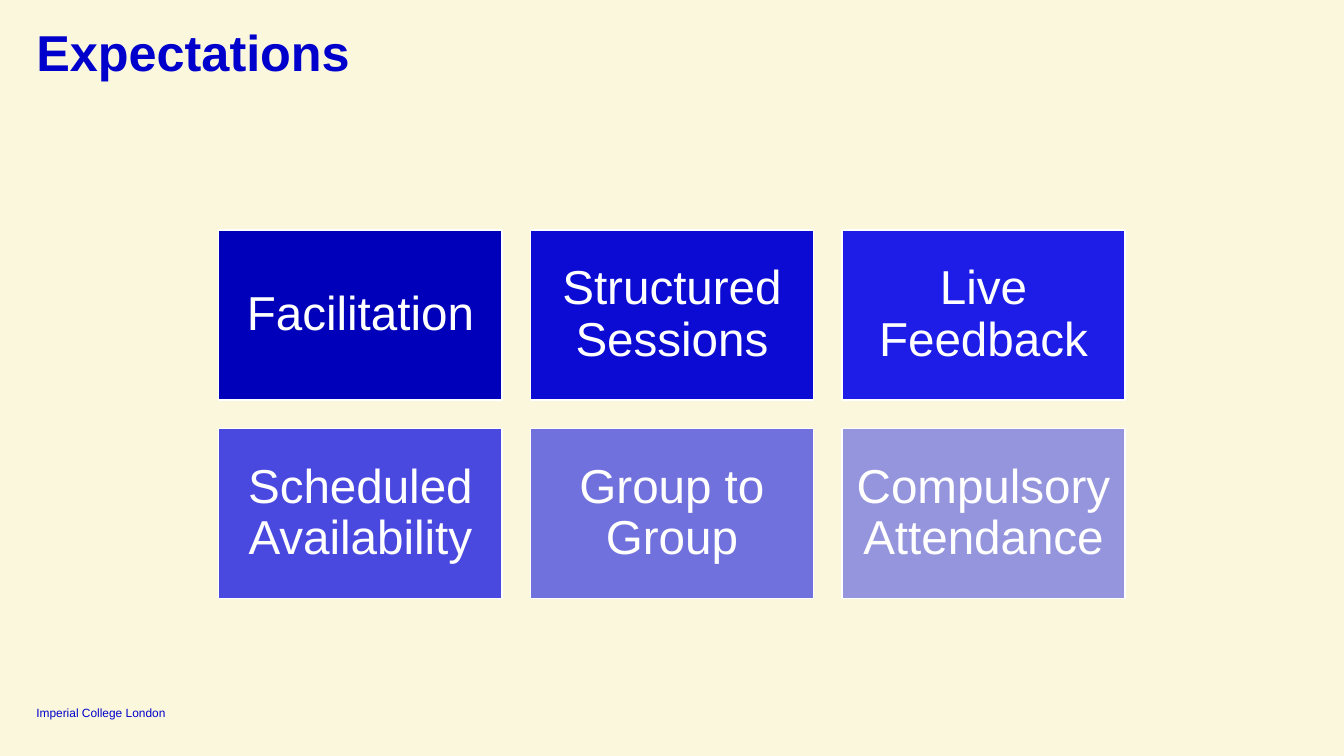
from pptx import Presentation
from pptx.dml.color import RGBColor
from pptx.enum.shapes import MSO_SHAPE
from pptx.enum.text import MSO_ANCHOR, PP_ALIGN
from pptx.util import Inches, Pt

COLOURS = {"background": "FBF7DC", "heading": "0000CD", "white": "FFFFFF"}
EXPECTATIONS = [
    ("Facilitation", "0000BA"),
    ("Structured Sessions", "0B0BD4"),
    ("Live Feedback", "1D1DE7"),
    ("Scheduled Availability", "4949E0"),
    ("Group to Group", "7171DD"),
    ("Compulsory Attendance", "9595DE"),
]

# Card grid, in inches
COLUMNS = 3
GRID_LEFT, GRID_TOP = 2.17, 2.28
CARD_WIDTH, CARD_HEIGHT = 2.81, 1.69
GAP = 0.28


def colour(value):
    return RGBColor.from_string(value)


def set_text(shape, text, size, text_colour, anchor, inset=0, bold=False,
             align=PP_ALIGN.LEFT, line_spacing=1.0):
    frame = shape.text_frame
    frame.word_wrap = True
    frame.vertical_anchor = anchor
    frame.margin_left = frame.margin_right = Inches(inset)
    frame.margin_top = frame.margin_bottom = Inches(inset)
    frame.text = text
    para = frame.paragraphs[0]
    para.alignment = align
    para.line_spacing = line_spacing
    para.space_before = Pt(0)
    para.font.name = "Arial"
    para.font.size = Pt(size)
    para.font.bold = bold
    para.font.color.rgb = colour(text_colour)


def format_title(page, text):
    title = page.shapes.title
    title.left, title.top = Inches(0.36), Inches(0.28)
    title.width, title.height = Inches(9.3), Inches(0.58)
    set_text(title, text, 36, COLOURS["heading"], MSO_ANCHOR.TOP,
             bold=True, line_spacing=0.9)


def add_footer(page, text):
    box = page.shapes.add_textbox(Inches(0.36), Inches(6.99), Inches(1.55), Inches(0.15))
    set_text(box, text, 8.5, COLOURS["heading"], MSO_ANCHOR.BOTTOM)


def add_card(page, index, text, fill):
    row, column = divmod(index, COLUMNS)
    card = page.shapes.add_shape(
        MSO_SHAPE.RECTANGLE,
        Inches(GRID_LEFT + column * (CARD_WIDTH + GAP)),
        Inches(GRID_TOP + row * (CARD_HEIGHT + GAP)),
        Inches(CARD_WIDTH), Inches(CARD_HEIGHT))
    card.shadow.inherit = False
    card.fill.solid()
    card.fill.fore_color.rgb = colour(fill)
    card.line.color.rgb = colour(COLOURS["white"])
    card.line.width = Pt(1)
    set_text(card, text, 34, COLOURS["white"], MSO_ANCHOR.MIDDLE, inset=0.13,
             align=PP_ALIGN.CENTER, line_spacing=0.9)


def main():
    deck = Presentation()
    deck.slide_width, deck.slide_height = Inches(13.33), Inches(7.5)
    page = deck.slides.add_slide(deck.slide_layouts[5])
    page.background.fill.solid()
    page.background.fill.fore_color.rgb = colour(COLOURS["background"])

    # Heading and footer
    format_title(page, "Expectations")
    add_footer(page, "Imperial College London")

    # Expectation cards
    for index, (text, fill) in enumerate(EXPECTATIONS):
        add_card(page, index, text, fill)

    deck.save("out.pptx")


if __name__ == "__main__":
    main()
